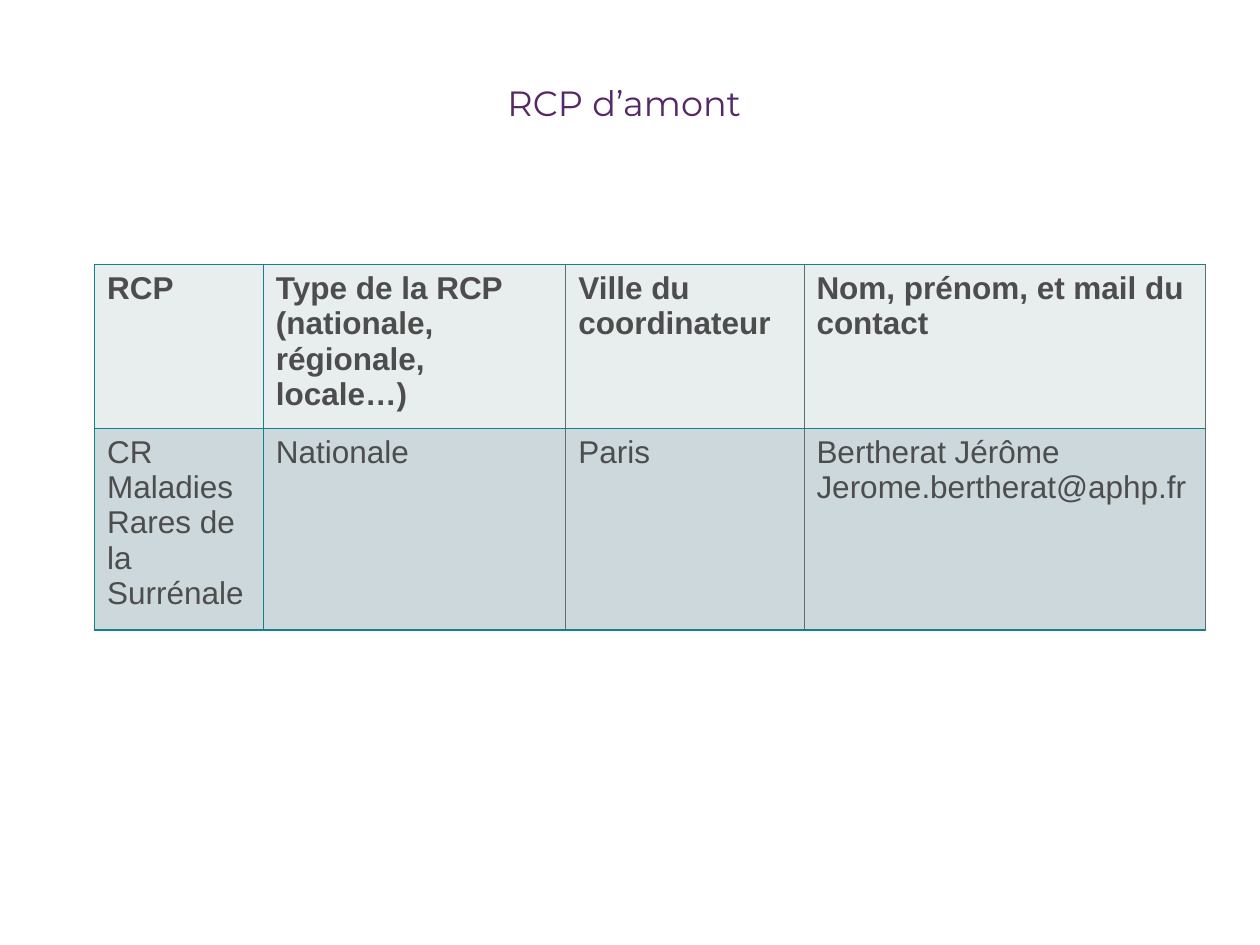
from lxml import etree
from pptx import Presentation
from pptx import util as u
from pptx.dml.color import RGBColor
from pptx.enum import text
from pptx.oxml import ns

Pt = u.Pt
TEAL, GREY, INK, PLUM = "15808D", "5A6E73", "4D4D4D", "562867"
HEAD, BODY = "E8EDEE", "CCD8DB"
COLS = [96.5, 172.8, 136.1, 229.7]
ROWS = [88, 108]
CELLS = [
    [["RCP"], ["Type de la RCP (nationale, régionale, locale…)"],
     ["Ville du coordinateur"], ["Nom, prénom, et mail du contact"]],
    [["CR Maladies Rares de la Surrénale"], ["Nationale"], ["Paris"],
     ["Bertherat Jérôme", "Jerome.bertherat@aphp.fr"]],
]


def color(code):
    return RGBColor.from_string(code)


def add_run(para, words, font, size, ink, bold=False):
    run = para.add_run()
    run.text = words
    run.font.name, run.font.size, run.font.bold = font, Pt(size), bold
    run.font.color.rgb = color(ink)


def add_edge(cell, side, ink, width):
    props = cell._tc.get_or_add_tcPr()
    line = etree.SubElement(props, ns.qn("a:ln" + side), w=str(Pt(width)))
    fill = etree.SubElement(line, ns.qn("a:solidFill"))
    etree.SubElement(fill, ns.qn("a:srgbClr"), val=ink)


def add_title(slide, box):
    frame = slide.shapes.add_textbox(*map(Pt, box)).text_frame
    frame.word_wrap = True
    para = frame.paragraphs[0]
    para.alignment = text.PP_ALIGN.CENTER
    add_run(para, "RCP d’amont", "Montserrat", 20, PLUM)


def fill_cell(cell, lines, row, col):
    # Teal frame, with thin grey rules right of the second column on
    thin, thick = (GREY, 0.5), (TEAL, 1)
    add_edge(cell, "L", *(thin if col > 1 else thick))
    add_edge(cell, "R", *(thin if col > 0 else thick))
    add_edge(cell, "T", *thick)
    add_edge(cell, "B", *thick)
    cell.fill.solid()
    cell.fill.fore_color.rgb = color(BODY if row else HEAD)
    frame = cell.text_frame
    for i, words in enumerate(lines):
        para = frame.add_paragraph() if i else frame.paragraphs[0]
        add_run(para, words, "Arial", 18, INK, bold=row == 0)


def add_grid(slide, left, top):
    box = map(Pt, (left, top, sum(COLS), sum(ROWS)))
    grid = slide.shapes.add_table(len(ROWS), len(COLS), *box).table
    for col, width in zip(grid.columns, COLS):
        col.width = Pt(width)
    for row, height in zip(grid.rows, ROWS):
        row.height = Pt(height)
    for r, row in enumerate(CELLS):
        for c, lines in enumerate(row):
            fill_cell(grid.cell(r, c), lines, r, c)


def main():
    deck = Presentation()
    deck.slide_width, deck.slide_height = Pt(720), Pt(540)
    slide = deck.slides.add_slide(deck.slide_layouts[6])
    add_title(slide, (130.3, 43.2, 452.9, 45.4))
    add_grid(slide, 54, 151.2)
    deck.save("out.pptx")


if __name__ == "__main__":
    main()
